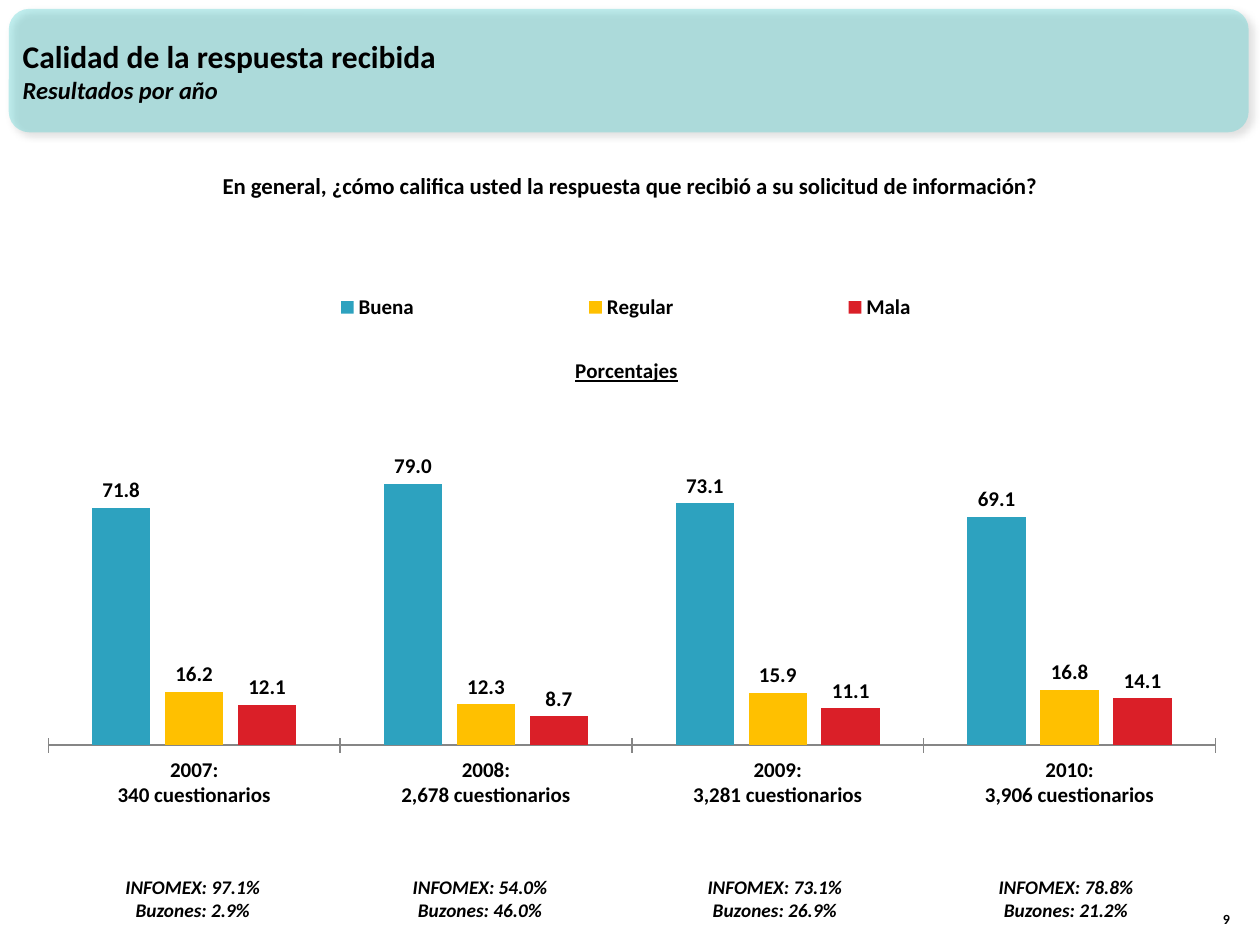
from lxml import etree
from pptx import Presentation
from pptx.chart.data import CategoryChartData
from pptx.dml.color import RGBColor
from pptx.enum.chart import XL_CHART_TYPE as ChartType
from pptx.enum.chart import XL_LABEL_POSITION as LabelPosition
from pptx.enum.chart import XL_LEGEND_POSITION as LegendPosition
from pptx.enum.chart import XL_TICK_LABEL_POSITION as TickLabels
from pptx.enum.chart import XL_TICK_MARK as TickMark
from pptx.enum.shapes import MSO_SHAPE as Shape
from pptx.enum.text import MSO_ANCHOR as Anchor
from pptx.enum.text import MSO_AUTO_SIZE as AutoSize
from pptx.enum.text import PP_ALIGN as Align
from pptx.oxml import parse_xml
from pptx.oxml.ns import nsdecls, qn
from pptx.util import Inches, Pt

FONT = "Calibri"
BLACK = "000000"
YEARS = [
    ("2007:\n340 cuestionarios", "97.1%", "2.9%", 0.74),
    ("2008:\n2,678 cuestionarios", "54.0%", "46.0%", 3.02),
    ("2009:\n3,281 cuestionarios", "73.1%", "26.9%", 5.36),
    ("2010:\n3,906 cuestionarios", "78.8%", "21.2%", 7.67),
]
SERIES = [
    ("Buena", "2DA2BF", (71.8, 79.0, 73.1, 69.1)),
    ("Regular", "FFC000", (16.2, 12.3, 15.9, 16.8)),
    ("Mala", "DA1F28", (12.1, 8.7, 11.1, 14.1)),
]


def color(code):
    return RGBColor.from_string(code)


def style_font(font, size, italic=False):
    font.name = FONT
    font.size = Pt(size)
    font.bold = True
    font.italic = italic
    font.color.rgb = color(BLACK)


def write_lines(frame, lines, align, anchor=Anchor.TOP):
    frame.word_wrap = True
    frame.vertical_anchor = anchor
    for index, (text, size, italic) in enumerate(lines):
        para = frame.paragraphs[0] if index == 0 else frame.add_paragraph()
        para.alignment = align
        span = para.add_run()
        span.text = text
        style_font(span.font, size, italic)


def add_text(page, box, lines, align, anchor=Anchor.TOP):
    holder = page.shapes.add_textbox(*map(Inches, box))
    write_lines(holder.text_frame, lines, align, anchor)
    return holder


def add_header(page, box):
    left, top, width, height = box
    banner = page.shapes.add_shape(Shape.ROUNDED_RECTANGLE, *map(Inches, box))
    banner.fill.solid()
    banner.fill.fore_color.rgb = color("33CCCC")
    banner.line.fill.background()
    tint = banner.element.spPr.find(qn("a:solidFill"))[0]
    etree.SubElement(tint, qn("a:alpha"), val="30000")
    banner.element.spPr.append(parse_xml(
        f'<a:effectLst {nsdecls("a")}><a:outerShdw blurRad="{Pt(4)}" dist="{Pt(3)}" '
        f'dir="2700000" algn="tl" rotWithShape="0"><a:srgbClr val="{BLACK}">'
        '<a:alpha val="40000"/></a:srgbClr></a:outerShdw></a:effectLst>'))

    title = page.shapes.title
    title.left, title.top = Inches(left + 0.01), Inches(top + 0.02)
    title.width, title.height = Inches(width - 0.67), Inches(height - 0.04)
    title.text_frame.auto_size = AutoSize.NONE
    lines = [("Calidad de la respuesta recibida", 18, False),
             ("Resultados por año", 14, True)]
    write_lines(title.text_frame, lines, Align.LEFT, Anchor.MIDDLE)
    title.element.addprevious(banner.element)


def place_part(part, inner=False, **fractions):
    for old in part.findall(qn("c:layout")):
        part.remove(old)
    target = '<c:layoutTarget val="inner"/>' if inner else ""
    modes = "".join(f'<c:{axis}Mode val="edge"/>' for axis in "xy")
    sizes = "".join(f'<c:{key} val="{value}"/>' for key, value in fractions.items())
    layout = parse_xml(f'<c:layout {nsdecls("c")}><c:manualLayout>{target}{modes}{sizes}'
                       '</c:manualLayout></c:layout>')
    later = ("c:overlay", "c:barChart")
    next(child for child in part if child.tag in map(qn, later)).addprevious(layout)


def add_ratings_chart(page, box):
    data = CategoryChartData(number_format="0.0")
    data.categories = [year[0] for year in YEARS]
    for name, _, values in SERIES:
        data.add_series(name, values)
    chart = page.shapes.add_chart(
        ChartType.COLUMN_CLUSTERED, *map(Inches, box), data).chart
    style_font(chart.font, 12)

    heading = chart.chart_title
    span = heading.text_frame.paragraphs[0].add_run()
    span.text = "Porcentajes"
    style_font(span.font, 12)
    span.font.underline = True
    heading.include_in_layout = False

    chart.has_legend = True
    legend = chart.legend
    legend.position = LegendPosition.TOP
    legend.include_in_layout = False
    style_font(legend.font, 12)

    values = chart.value_axis
    values.minimum_scale, values.maximum_scale, values.major_unit = 0, 100, 20
    values.has_major_gridlines = False
    values.tick_labels.number_format = "0.0"
    values.tick_labels.number_format_is_linked = False
    values.visible = False

    years = chart.category_axis
    years.major_tick_mark = TickMark.CROSS
    years.tick_label_position = TickLabels.LOW
    years.format.line.color.rgb = color("868686")
    style_font(years.tick_labels.font, 12)

    plot = chart.plots[0]
    plot.gap_width, plot.overlap = 150, -25
    plot.vary_by_categories = False
    for series, (_, code, _) in zip(plot.series, SERIES):
        series.format.fill.solid()
        series.format.fill.fore_color.rgb = color(code)
        labels = series.data_labels
        labels.show_value = True
        labels.number_format = "0.0"
        labels.number_format_is_linked = False
        labels.position = LabelPosition.OUTSIDE_END
        style_font(labels.font, 12)

    area = chart.element.chart
    place_part(area.find(qn("c:title")), x=0.45, y=0.14)
    place_part(area.find(qn("c:legend")), x=0.12, y=0.02, w=0.75, h=0.08)
    place_part(area.plotArea, inner=True, x=0.017, y=0.249, w=0.966, h=0.585)


def add_sources(page, box):
    left, top, width, height = box
    for _, online, mailbox, offset in YEARS:
        lines = [(f"INFOMEX: {online}", 11, True), (f"Buzones: {mailbox}", 11, True)]
        add_text(page, (left + offset, top, width, height), lines, Align.CENTER)


def main():
    deck = Presentation()
    deck.slide_width, deck.slide_height = Inches(10), Inches(7.5)
    page = deck.slides.add_slide(deck.slide_layouts[5])
    add_header(page, (0.07, 0.07, 9.84, 0.98))
    add_text(page, (9.46, 7.01, 0.4, 0.4), [("9", 8, False)], Align.RIGHT, Anchor.BOTTOM)
    add_ratings_chart(page, (0.22, 2.17, 9.59, 4.49))
    question = ("En general, ¿cómo califica usted la respuesta que recibió "
                "a su solicitud de información?")
    add_text(page, (0.89, 1.31, 8.21, 0.32), [(question, 13, False)], Align.CENTER)
    add_sources(page, (0, 6.9, 1.58, 0.47))
    deck.save("out.pptx")


if __name__ == "__main__":
    main()
